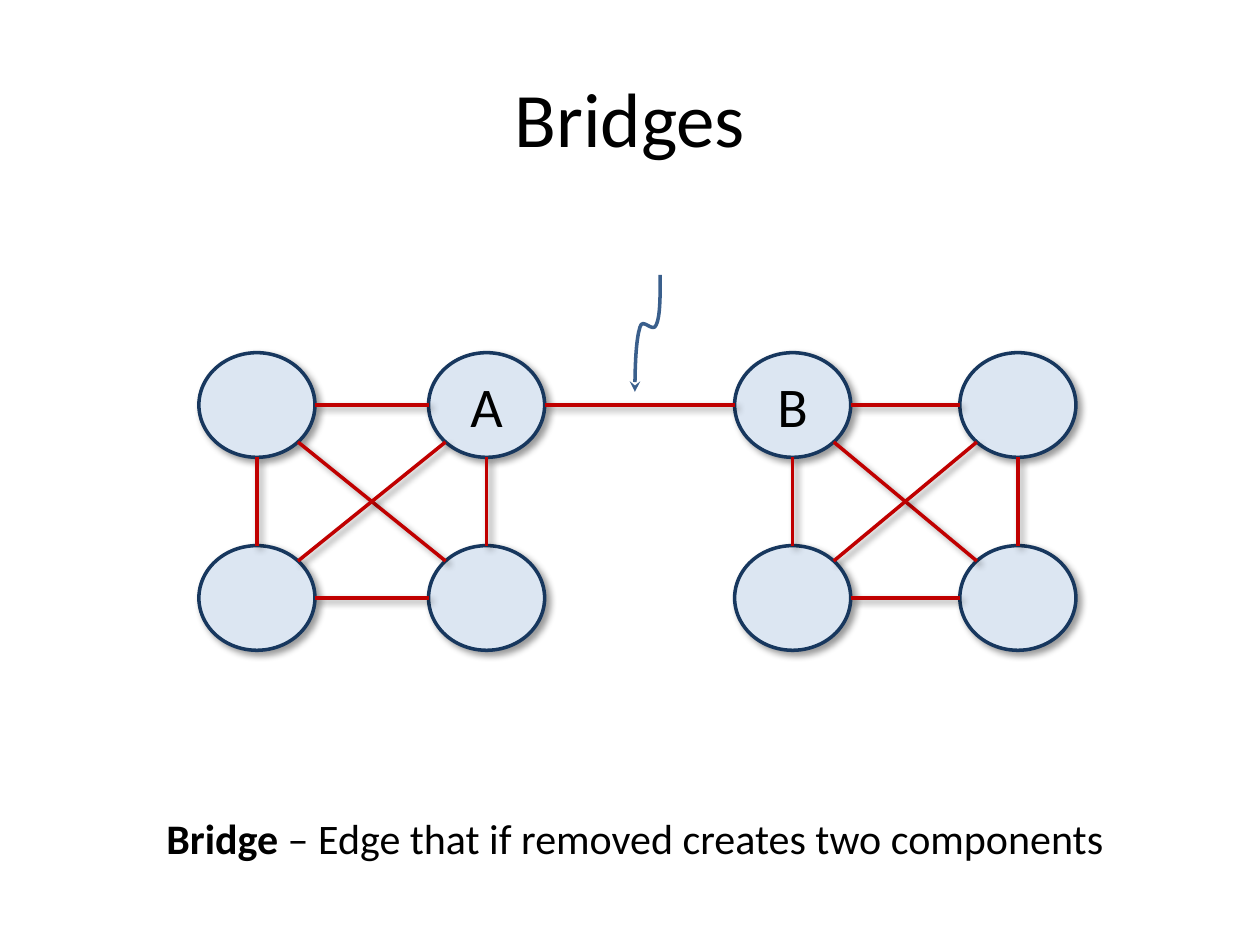
import math

import lxml.etree
import pptx
import pptx.dml.color
import pptx.enum.shapes
import pptx.enum.text
import pptx.oxml
import pptx.oxml.ns
import pptx.util

Cm = pptx.util.Cm
qn = pptx.oxml.ns.qn

TITLE = "Bridges"
CAPTION = [("Bridge", True), (" – Edge that if removed creates two components", False)]

COLUMNS = [4.01, 8.64, 14.81, 19.35]
ROWS = [7.11, 11.0]
NODE_WIDTH, NODE_HEIGHT = 2.34, 2.11
LABELS = {(1, 0): "A", (2, 0): "B"}

SITES = ["top", "top left", "left", "bottom left",
         "bottom", "bottom right", "right", "top right"]
CLUSTER_STARTS = [0, 2]
CLUSTER_EDGES = [
    ((0, 0), "right", (1, 0), "left"),
    ((0, 1), "right", (1, 1), "left"),
    ((0, 0), "bottom", (0, 1), "top"),
    ((1, 0), "bottom", (1, 1), "top"),
    ((0, 0), "bottom right", (1, 1), "top left"),
    ((1, 0), "bottom left", (0, 1), "top right"),
]
BRIDGE = ((1, 0), "right", (2, 0), "left")

POINTER_START = (13.31, 5.54)
POINTER_CURVES = [
    [(13.31, 5.97), (13.31, 6.38), (13.23, 6.55)],
    [(13.16, 6.73), (12.95, 6.38), (12.9, 6.6)],
    [(12.83, 6.83), (12.8, 7.37), (12.8, 7.9)],
]

THEME = {
    "font": "Calibri",
    "title": 44, "label": 32, "caption": 24, "line": 2,
    "text": "000000", "node": "DCE6F2", "outline": "17375E",
    "edge": "C00000", "pointer": "3A5F8C",
}


def color(name):
    return pptx.dml.color.RGBColor.from_string(THEME[name])


def write(box, runs, size):
    para = box.text_frame.paragraphs[0]
    para.alignment = pptx.enum.text.PP_ALIGN.CENTER
    for text, bold in runs:
        span = para.add_run()
        span.text = text
        span.font.name = THEME["font"]
        span.font.size = pptx.util.Pt(THEME[size])
        span.font.bold = bold
        span.font.color.rgb = color("text")


def style_line(line, name):
    line.color.rgb = color(name)
    line.width = pptx.util.Pt(THEME["line"])


def add_shadow(shape):
    shape._element.spPr.append(pptx.oxml.parse_xml(
        '<a:effectLst xmlns:a="http://schemas.openxmlformats.org/drawingml/2006/main">'
        '<a:outerShdw blurRad="50800" dist="38100" dir="2700000" algn="tl" rotWithShape="0">'
        '<a:srgbClr val="000000"><a:alpha val="40000"/></a:srgbClr>'
        '</a:outerShdw></a:effectLst>'))


def add_node(page, column, row):
    node = page.shapes.add_shape(
        pptx.enum.shapes.MSO_SHAPE.OVAL, Cm(COLUMNS[column]), Cm(ROWS[row]),
        Cm(NODE_WIDTH), Cm(NODE_HEIGHT))
    node.fill.solid()
    node.fill.fore_color.rgb = color("node")
    style_line(node.line, "outline")
    add_shadow(node)
    if (column, row) in LABELS:
        write(node, [(LABELS[column, row], False)], "label")
    return node


def site_point(node, site):
    angle = math.radians(90 + 45 * SITES.index(site))
    return (round(node.left + node.width / 2 * (1 + math.cos(angle))),
            round(node.top + node.height / 2 * (1 - math.sin(angle))))


def add_edge(page, start, start_site, end, end_site):
    edge = page.shapes.add_connector(
        pptx.enum.shapes.MSO_CONNECTOR.STRAIGHT,
        *site_point(start, start_site), *site_point(end, end_site))
    style_line(edge.line, "edge")
    add_shadow(edge)
    joints = edge._element.nvCxnSpPr.cNvCxnSpPr
    for tag, node, site in (("a:stCxn", start, start_site), ("a:endCxn", end, end_site)):
        lxml.etree.SubElement(joints, qn(tag), id=str(node.shape_id),
                              idx=str(SITES.index(site)))


def add_pointer(page):
    builder = page.shapes.build_freeform(*map(Cm, POINTER_START))
    builder.add_line_segments(
        [tuple(map(Cm, curve[-1])) for curve in POINTER_CURVES], close=False)
    pointer = builder.convert_to_shape()
    pointer.shadow.inherit = False
    pointer.fill.background()
    style_line(pointer.line, "pointer")
    segments = list(pointer._element.iter(qn("a:lnTo")))
    for segment, curve in zip(segments, POINTER_CURVES):
        bezier = lxml.etree.Element(qn("a:cubicBezTo"))
        for x, y in curve:
            lxml.etree.SubElement(bezier, qn("a:pt"), x=str(Cm(x) - pointer.left),
                                  y=str(Cm(y) - pointer.top))
        segment.getparent().replace(segment, bezier)
    lxml.etree.SubElement(pointer.line._get_or_add_ln(), qn("a:tailEnd"), type="stealth")


def main():
    deck = pptx.Presentation()
    deck.slide_width, deck.slide_height = Cm(25.4), Cm(19.05)
    page = deck.slides.add_slide(deck.slide_layouts[5])

    title = page.shapes.title
    title.left, title.top, title.width, title.height = map(Cm, (1.27, 0.76, 22.86, 3.18))
    write(title, [(TITLE, False)], "title")

    nodes = {(column, row): add_node(page, column, row)
             for column in range(len(COLUMNS)) for row in range(len(ROWS))}
    edges = [((a + first, b), site, (c + first, d), other)
             for first in CLUSTER_STARTS
             for (a, b), site, (c, d), other in CLUSTER_EDGES]
    for start, start_site, end, end_site in edges + [BRIDGE]:
        add_edge(page, nodes[start], start_site, nodes[end], end_site)
    add_pointer(page)

    caption = page.shapes.add_textbox(*map(Cm, (1.47, 16.26, 22.66, 1.27)))
    caption.text_frame.word_wrap = True
    caption.text_frame.auto_size = pptx.enum.text.MSO_AUTO_SIZE.SHAPE_TO_FIT_TEXT
    write(caption, CAPTION, "caption")

    deck.save("out.pptx")


if __name__ == "__main__":
    main()
